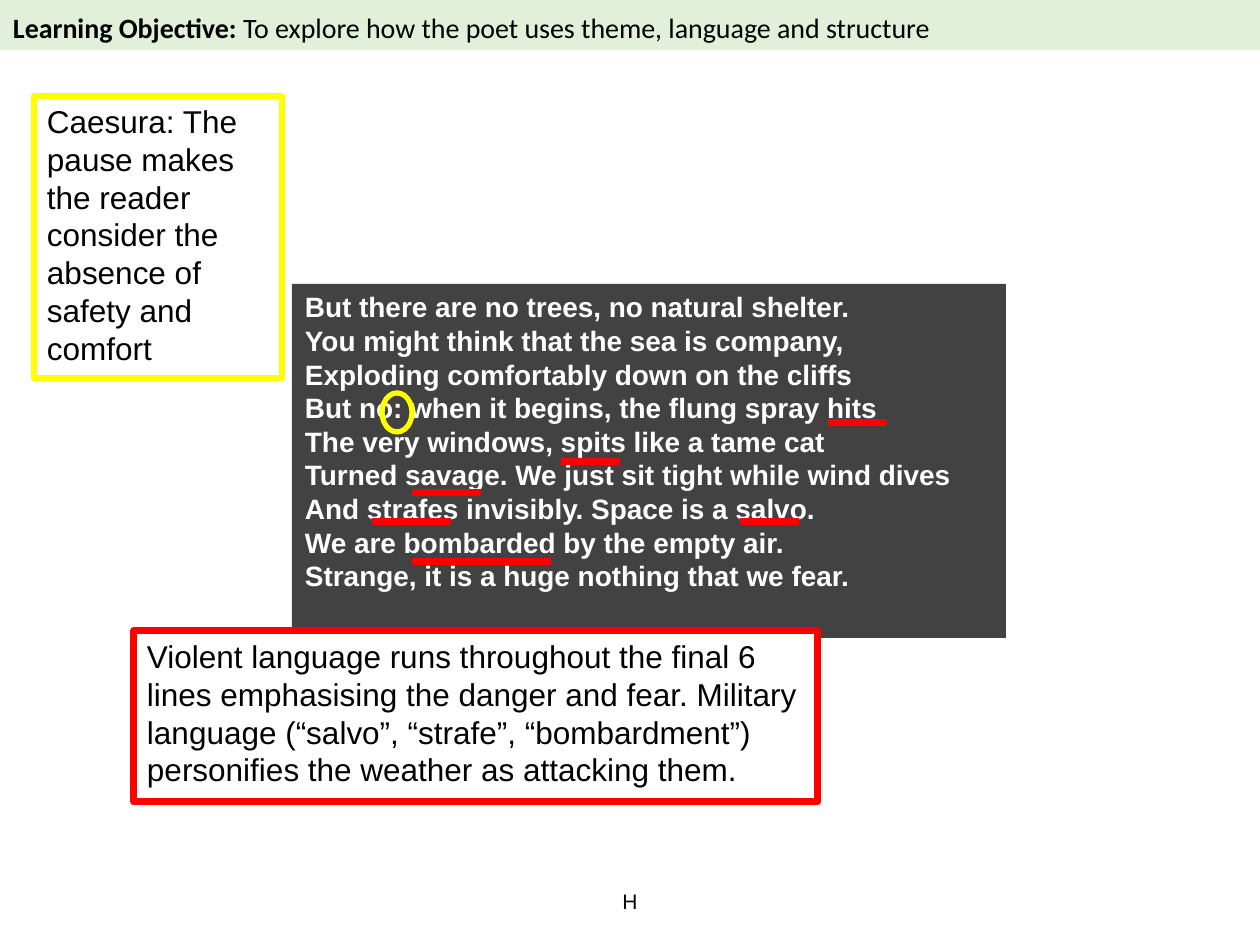
from dataclasses import dataclass
from typing import Optional

from lxml.etree import SubElement
from pptx import Presentation
from pptx.dml.color import RGBColor
from pptx.enum.shapes import MSO_CONNECTOR, MSO_SHAPE
from pptx.enum.text import MSO_ANCHOR, MSO_AUTO_SIZE, PP_ALIGN
from pptx.oxml.ns import qn
from pptx.util import Emu, Pt

PX = 914400 / 126
YELLOW, RED, WHITE, BLACK = "FFFF00", "FF0000", "FFFFFF", "000000"


@dataclass
class Box:
    """A rectangle or ellipse with optional fill, outline and text."""
    x: int
    y: int
    w: int
    h: int
    fill: Optional[str] = None
    line: Optional[str] = None
    weight: int = 3
    alpha: int = 100
    lines: tuple[str, ...] = ()
    size: int = 18
    color: str = BLACK
    bold: bool = False
    preset: MSO_SHAPE = MSO_SHAPE.RECTANGLE


@dataclass
class Underline:
    """A horizontal stroke under a word of the poem."""
    x: int
    y: int
    w: int


POEM = Box(292, 284, 714, 354, fill=BLACK, alpha=74, size=16, color=WHITE, bold=True, lines=(
    "But there are no trees, no natural shelter.",
    "You might think that the sea is company,",
    "Exploding comfortably down on the cliffs",
    "But no: when it begins, the flung spray hits",
    "The very windows, spits like a tame cat",
    "Turned savage. We just sit tight while wind dives",
    "And strafes invisibly. Space is a salvo.",
    "We are bombarded by the empty air.",
    "Strange, it is a huge nothing that we fear.",
))
CAESURA_RING = Box(382, 393, 30, 39, line=YELLOW, preset=MSO_SHAPE.OVAL)
CAESURA_NOTE = Box(34, 96, 248, 282, fill=WHITE, line=YELLOW, lines=(
    "Caesura: The pause makes the reader consider the absence of safety and comfort",
))
VIOLENCE_NOTE = Box(134, 631, 684, 171, fill=WHITE, line=RED, weight=4, lines=(
    "Violent language runs throughout the final 6 lines emphasising the danger and fear. "
    "Military language (“salvo”, “strafe”, “bombardment”) "
    "personifies the weather as attacking them.",
))
UNDERLINES = (
    Underline(828, 423, 59), Underline(561, 462, 59), Underline(412, 493, 69),
    Underline(372, 522, 79), Underline(740, 522, 59), Underline(412, 562, 139),
)


def px(n: int) -> Emu:
    """Turn pixels into EMU."""
    return Emu(round(n * PX))


def rgb(value: str) -> RGBColor:
    """Turn a hex string into a colour."""
    return RGBColor.from_string(value)


def add_run(p, text: str, size: int, color: str = BLACK,
            bold: bool = False, font: str = "Arial") -> None:
    """Append one formatted run to a paragraph."""
    r = p.add_run()
    r.text = text
    r.font.name, r.font.size, r.font.bold = font, Pt(size), bold
    r.font.color.rgb = rgb(color)


def set_frame(tf, anchor: MSO_ANCHOR, top: int = 6) -> None:
    """Set wrapping, anchoring and insets of a text frame."""
    tf.word_wrap, tf.auto_size = True, MSO_AUTO_SIZE.NONE
    tf.vertical_anchor = anchor
    tf.margin_left = tf.margin_right = px(13)
    tf.margin_top, tf.margin_bottom = px(top), px(0)


def draw_box(s, box: Box) -> None:
    """Draw a box and its text."""
    sp = s.shapes.add_shape(box.preset, px(box.x), px(box.y), px(box.w), px(box.h))
    sp.shadow.inherit = False
    if box.fill:
        sp.fill.solid()
        sp.fill.fore_color.rgb = rgb(box.fill)
        if box.alpha < 100:
            clr = sp.fill._xPr.find(".//" + qn("a:srgbClr"))
            SubElement(clr, qn("a:alpha")).set("val", str(box.alpha * 1000))
    else:
        sp.fill.background()
    if box.line:
        sp.line.color.rgb = rgb(box.line)
        sp.line.width = Pt(box.weight)
    else:
        sp.line.fill.background()
    if box.lines:
        set_frame(sp.text_frame, MSO_ANCHOR.TOP)
        p = sp.text_frame.paragraphs[0]
        p.alignment = PP_ALIGN.LEFT
        for i, text in enumerate(box.lines):
            if i:
                p.add_line_break()
            add_run(p, text, box.size, box.color, box.bold)


def draw_underline(s, u: Underline) -> None:
    """Draw a red stroke under a word."""
    c = s.shapes.add_connector(MSO_CONNECTOR.STRAIGHT, px(u.x), px(u.y), px(u.x + u.w), px(u.y))
    c.line.color.rgb = rgb(RED)
    c.line.width = Pt(4)
    SubElement(c._element.spPr, qn("a:effectLst"))


def draw_objective(s) -> None:
    """Turn the title placeholder into the learning objective band."""
    sp = s.shapes.title
    sp.left, sp.top, sp.width, sp.height = px(0), px(0), px(1260), px(50)
    sp.fill.solid()
    sp.fill.fore_color.rgb = rgb("E2F0D9")
    set_frame(sp.text_frame, MSO_ANCHOR.TOP, top=11)
    p = sp.text_frame.paragraphs[0]
    p.alignment = PP_ALIGN.LEFT
    add_run(p, "Learning Objective: ", 16, bold=True, font="Calibri")
    add_run(p, "To explore how the poet uses theme, language and structure", 16, font="Calibri")


def draw_footer(s) -> None:
    """Draw the centred footer letter."""
    tf = s.shapes.add_textbox(px(417), px(876), px(426), px(50)).text_frame
    set_frame(tf, MSO_ANCHOR.MIDDLE, top=0)
    p = tf.paragraphs[0]
    p.alignment = PP_ALIGN.CENTER
    add_run(p, "H", 12)


def main() -> None:
    """Build and save the slide."""
    prs = Presentation()
    prs.slide_width, prs.slide_height = px(1260), px(945)
    s = prs.slides.add_slide(prs.slide_layouts[5])
    draw_footer(s)
    for box in (POEM, CAESURA_RING, CAESURA_NOTE):
        draw_box(s, box)
    for u in UNDERLINES:
        draw_underline(s, u)
    draw_box(s, VIOLENCE_NOTE)
    draw_objective(s)
    prs.save("out.pptx")


if __name__ == "__main__":
    main()
